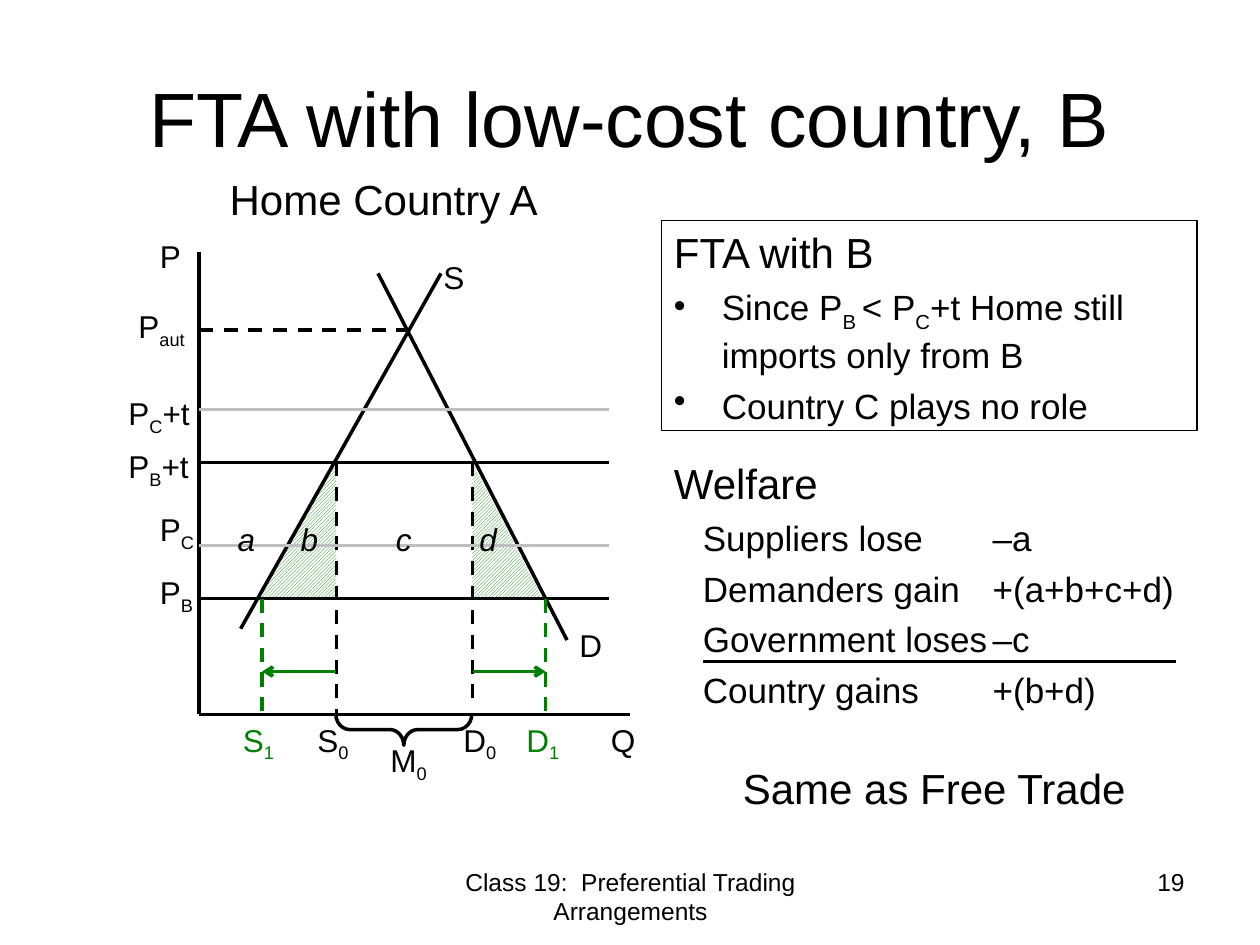
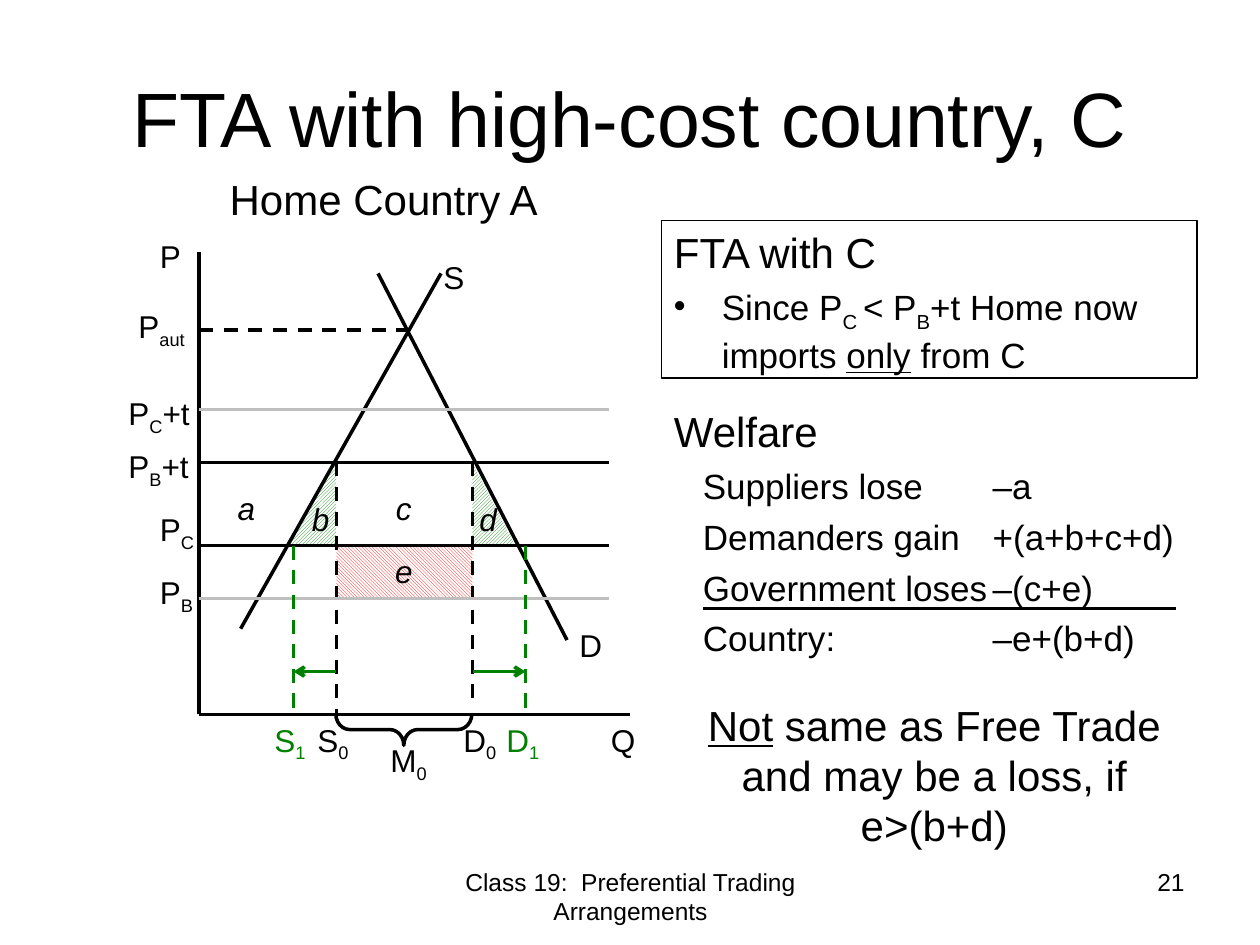
from dataclasses import dataclass

from lxml import etree
from pptx import Presentation
from pptx import util as u
from pptx.dml.color import RGBColor
from pptx.enum import dml, shapes, text
from pptx.oxml.ns import qn

FONT = "Arial"
BLACK, GREEN, RED, GREY, WHITE = "000000", "008000", "FF0000", "BFBFBF", "FFFFFF"
LEFT, CENTER, RIGHT = text.PP_ALIGN.LEFT, text.PP_ALIGN.CENTER, text.PP_ALIGN.RIGHT
FOOTER = "Class 19:  Preferential Trading Arrangements"

AXIS_X, AXIS_Y, PRICE_END = 1.58, 5.67, 4.83
S0, D0, ARROW_Y = 2.67, 3.75, 5.33
PRICE_Y = {"C+t": 3.25, "B+t": 3.67, "C": 4.33, "B": 4.75}
SUPPLY = (1.91, 4.99, 3.5, 2.17)
DEMAND = (4.5, 5.08, 3, 2.17)


@dataclass(frozen=True)
class Label:
    wording: str
    left: float
    top: float
    width: float = 0.75
    color: str = BLACK
    align: text.PP_ALIGN = LEFT
    italic: bool = False
    size: int = 18
    height: float = 0.4


@dataclass(frozen=True)
class Segment:
    x1: float
    y1: float
    x2: float
    y2: float
    color: str = BLACK
    dashed: bool = False
    arrow: bool = False


@dataclass(frozen=True)
class Scenario:
    title: str
    number: str
    partner: str
    s1: float
    d1: float
    areas: tuple[tuple[str, float, float], ...]
    box_height: float
    heading: str
    bullets: tuple[str, ...]
    welfare_top: float
    welfare: tuple[tuple[str, str], ...]
    sum_y: float
    verdict: tuple[str, ...]
    verdict_top: float
    tariff_loss: bool = False


AXES_AND_CURVES = (
    Segment(AXIS_X, AXIS_Y, 5, AXIS_Y),
    Segment(AXIS_X, AXIS_Y, AXIS_X, 2),
    Segment(*DEMAND),
    Segment(AXIS_X, 2.62, 3.25, 2.62, dashed=True),
    Segment(D0, PRICE_Y["B+t"], D0, 5.58, dashed=True),
    Segment(S0, PRICE_Y["B+t"], S0, AXIS_Y, dashed=True),
    Segment(*SUPPLY),
)

DIAGRAM_LABELS = (
    Label("Home Country A", 1.67, 1.33, 2.75, align=CENTER, size=24, height=0.5),
    Label("P", 1.17, 1.83),
    Label("S", 3.42, 2),
    Label("P|_aut", 1, 2.39),
    Label("P|_C|+t", 0.92, 3.08),
    Label("P|_B|+t", 0.92, 3.5),
    Label("P|_C", 1.17, 4, 0.5),
    Label("P|_B", 1.17, 4.5, 0.5),
    Label("D", 4.5, 4.92, 0.42),
    Label("Q", 4.75, AXIS_Y),
    Label("S|_0", 2.42, AXIS_Y, 0.5),
    Label("D|_0", 3.58, AXIS_Y, 0.5),
    Label("M|_0", 3, 5.83, 0.58),
)

SCENARIOS = (
    Scenario(
        title="FTA with low-cost country, B", number="19", partner="B",
        s1=2.08, d1=4.33,
        areas=(("a", 1.58, 4.08), ("b", 2.08, 4.08), ("c", 2.83, 4.08), ("d", 3.5, 4.08)),
        box_height=1.67, heading="FTA with B",
        bullets=("Since P|_B |< P|_C|+t Home still imports only from B",
                 "Country C plays no role"),
        welfare_top=3.58,
        welfare=(("Suppliers lose", "–a"), ("Demanders gain", "+(a+b+c+d)"),
                 ("Government loses", "–c"), ("Country gains", "+(b+d)")),
        sum_y=5.25, verdict=("Same as Free Trade",), verdict_top=6,
    ),
    Scenario(
        title="FTA with high-cost country, C", number="21", partner="C",
        s1=2.33, d1=4.17,
        areas=(("a", 1.58, 3.83), ("b", 2.17, 3.92), ("c", 2.83, 3.83),
               ("d", 3.5, 3.92), ("e", 2.83, 4.33)),
        box_height=1.25, heading="FTA with C",
        bullets=("Since P|_C |< P|_B|+t Home now imports |*only|* from C".replace("|* ", "| "),),
        welfare_top=3.17,
        welfare=(("Suppliers lose", "–a"), ("Demanders gain", "+(a+b+c+d)"),
                 ("Government loses", "–(c+e)"), ("Country:", "–e+(b+d)")),
        sum_y=4.83,
        verdict=("*Not| same as Free Trade", "and may be a loss, if e>(b+d)"),
        verdict_top=5.5, tariff_loss=True,
    ),
)


def rgb(color: str) -> RGBColor:
    return RGBColor.from_string(color)


def write(paragraph, wording: str, size: int, color: str = BLACK,
          align: text.PP_ALIGN = LEFT, italic: bool = False) -> None:
    paragraph.alignment = align
    for part in wording.split("|"):
        run = paragraph.add_run()
        run.text = part.lstrip("_*")
        font = run.font
        font.name, font.size, font.italic = FONT, u.Pt(size), italic
        font.color.rgb = rgb(color)
        if part.startswith("_"):
            run._r.get_or_add_rPr().set("baseline", "-25000")
        if part.startswith("*"):
            font.underline = True


def add_box(slide, left: float, top: float, width: float, height: float):
    shape = slide.shapes.add_textbox(*map(u.Inches, (left, top, width, height)))
    shape.text_frame.word_wrap = True
    return shape


def next_paragraph(frame):
    paragraph = frame.add_paragraph()
    paragraph.space_before = u.Pt(5)
    return paragraph


def add_label(slide, label: Label) -> None:
    shape = add_box(slide, label.left, label.top, label.width, label.height)
    write(shape.text_frame.paragraphs[0], label.wording, label.size,
          label.color, label.align, label.italic)


def add_segment(slide, segment: Segment) -> None:
    ends = map(u.Inches, (segment.x1, segment.y1, segment.x2, segment.y2))
    connector = slide.shapes.add_connector(shapes.MSO_CONNECTOR.STRAIGHT, *ends)
    connector.line.color.rgb = rgb(segment.color)
    connector.line.width = u.Pt(2)
    if segment.dashed:
        connector.line.dash_style = dml.MSO_LINE.DASH
    if segment.arrow:
        etree.SubElement(connector.line._get_or_add_ln(), qn("a:tailEnd"), type="arrow")
    etree.SubElement(connector._element.spPr, qn("a:effectLst"))


def add_hatch(slide, kind, left: float, top: float, width: float, height: float,
              color: str, pattern, flipped: bool = False) -> None:
    shape = slide.shapes.add_shape(kind, *map(u.Inches, (left, top, width, height)))
    shape.shadow.inherit = False
    shape.line.fill.background()
    shape.fill.patterned()
    shape.fill.pattern = pattern
    shape.fill.fore_color.rgb = rgb(color)
    shape.fill.back_color.rgb = rgb(WHITE)
    if flipped:
        shape._element.spPr.xfrm.set("flipH", "1")


def run_per_rise(curve: tuple[float, float, float, float]) -> float:
    x1, y1, x2, y2 = curve
    return abs((x2 - x1) / (y2 - y1))


def add_welfare_areas(slide, scenario: Scenario) -> None:
    triangle = shapes.MSO_SHAPE.RIGHT_TRIANGLE
    upward = dml.MSO_PATTERN.DARK_UPWARD_DIAGONAL
    top = PRICE_Y["B+t"]
    height = PRICE_Y[scenario.partner] - top
    supply_width = height * run_per_rise(SUPPLY)
    demand_width = height * run_per_rise(DEMAND)
    add_hatch(slide, triangle, S0 - supply_width, top, supply_width, height,
              GREEN, upward, flipped=True)
    add_hatch(slide, triangle, D0, top, demand_width, height, GREEN, upward)
    if scenario.tariff_loss:
        add_hatch(slide, shapes.MSO_SHAPE.RECTANGLE, S0, PRICE_Y["C"], D0 - S0,
                  PRICE_Y["B"] - PRICE_Y["C"], RED, dml.MSO_PATTERN.DARK_DOWNWARD_DIAGONAL)


def add_import_brace(slide) -> None:
    brace = slide.shapes.add_shape(
        shapes.MSO_SHAPE.LEFT_BRACE, *map(u.Inches, (3.08, 5.25, 0.25, 1.08)))
    brace.rotation = 270
    brace.adjustments[0] = 0.44
    brace.shadow.inherit = False
    brace.fill.background()
    brace.line.color.rgb = rgb(BLACK)
    brace.line.width = u.Pt(2)


def add_diagram(slide, scenario: Scenario) -> None:
    add_welfare_areas(slide, scenario)
    for segment in AXES_AND_CURVES:
        add_segment(slide, segment)
    for name, y in PRICE_Y.items():
        color = BLACK if name in ("B+t", scenario.partner) else GREY
        add_segment(slide, Segment(AXIS_X, y, PRICE_END, y, color))
    add_import_brace(slide)
    for name, start, end in (("S", S0, scenario.s1), ("D", D0, scenario.d1)):
        add_segment(slide, Segment(end, PRICE_Y[scenario.partner], end, AXIS_Y, GREEN, dashed=True))
        add_segment(slide, Segment(start, ARROW_Y, end, ARROW_Y, GREEN, arrow=True))
        add_label(slide, Label(f"{name}|_1", end - 0.25, AXIS_Y, 0.5, GREEN))
    for label in DIAGRAM_LABELS:
        add_label(slide, label)
    for name, left, top in scenario.areas:
        add_label(slide, Label(name, left, top, align=CENTER, italic=True))


def add_agreement(slide, scenario: Scenario) -> None:
    shape = add_box(slide, 5.25, 1.75, 4.25, scenario.box_height)
    shape.line.color.rgb = rgb(BLACK)
    shape.line.width = u.Pt(0.75)
    frame = shape.text_frame
    write(frame.paragraphs[0], scenario.heading, 24)
    for bullet in scenario.bullets:
        paragraph = next_paragraph(frame)
        write(paragraph, bullet, 20)
        properties = paragraph._p.get_or_add_pPr()
        properties.set("marL", str(u.Inches(0.38)))
        properties.set("indent", str(-u.Inches(0.38)))
        etree.SubElement(properties, qn("a:buChar"), char="•")


def add_welfare(slide, scenario: Scenario) -> None:
    frame = add_box(slide, 5.25, scenario.welfare_top, 4.25, 2.17).text_frame
    write(frame.paragraphs[0], "Welfare", 24)
    for party, change in scenario.welfare:
        paragraph = next_paragraph(frame)
        write(paragraph, f"\t{party}\t{change}", 20)
        stops = etree.SubElement(paragraph._p.get_or_add_pPr(), qn("a:tabLst"))
        for position in (0.23, 2.53):
            etree.SubElement(stops, qn("a:tab"), pos=str(u.Inches(position)), algn="l")
    add_segment(slide, Segment(5.58, scenario.sum_y, 9.33, scenario.sum_y))


def add_verdict(slide, scenario: Scenario) -> None:
    frame = add_box(slide, 5.5, scenario.verdict_top, 3.83, 0.5).text_frame
    for index, line in enumerate(scenario.verdict):
        paragraph = frame.add_paragraph() if index else frame.paragraphs[0]
        write(paragraph, line, 24, align=CENTER)


def add_title(slide, wording: str) -> None:
    title = slide.shapes.title
    title.left, title.top, title.width, title.height = map(u.Inches, (0.5, 0.3, 9, 1.25))
    title.text_frame.vertical_anchor = text.MSO_ANCHOR.MIDDLE
    write(title.text_frame.paragraphs[0], wording, 44, align=CENTER)


def build_slide(presentation, scenario: Scenario) -> None:
    slide = presentation.slides.add_slide(presentation.slide_layouts[5])
    add_title(slide, scenario.title)
    add_diagram(slide, scenario)
    add_agreement(slide, scenario)
    add_welfare(slide, scenario)
    add_verdict(slide, scenario)
    add_label(slide, Label(FOOTER, 3.42, 6.83, 3.17, align=CENTER, size=14, height=0.52))
    add_label(slide, Label(scenario.number, 7.17, 6.83, 2.33, align=RIGHT, size=14, height=0.52))


def main() -> None:
    presentation = Presentation()
    presentation.slide_width, presentation.slide_height = u.Inches(10), u.Inches(7.5)
    for scenario in SCENARIOS:
        build_slide(presentation, scenario)
    presentation.save("out.pptx")


if __name__ == "__main__":
    main()
